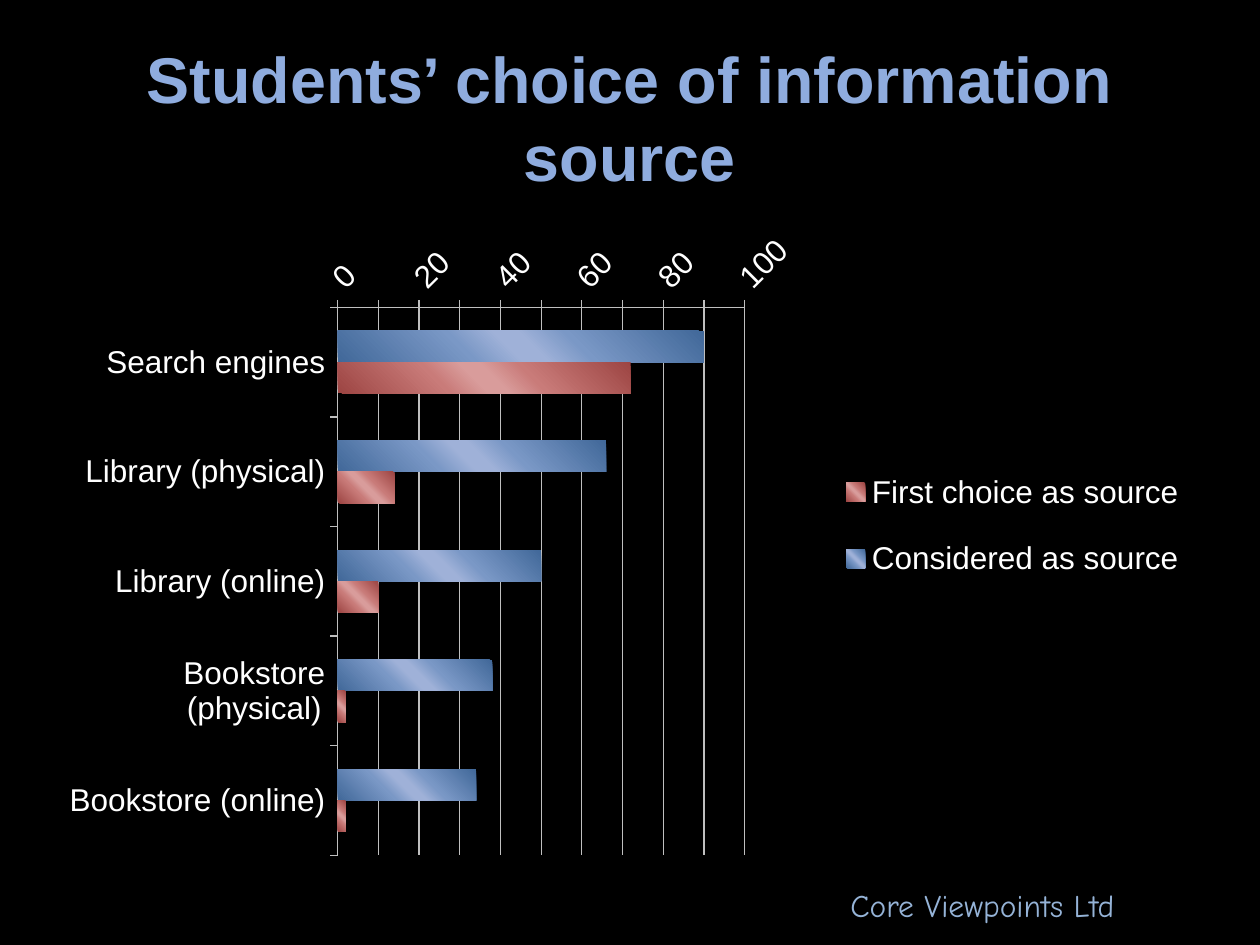
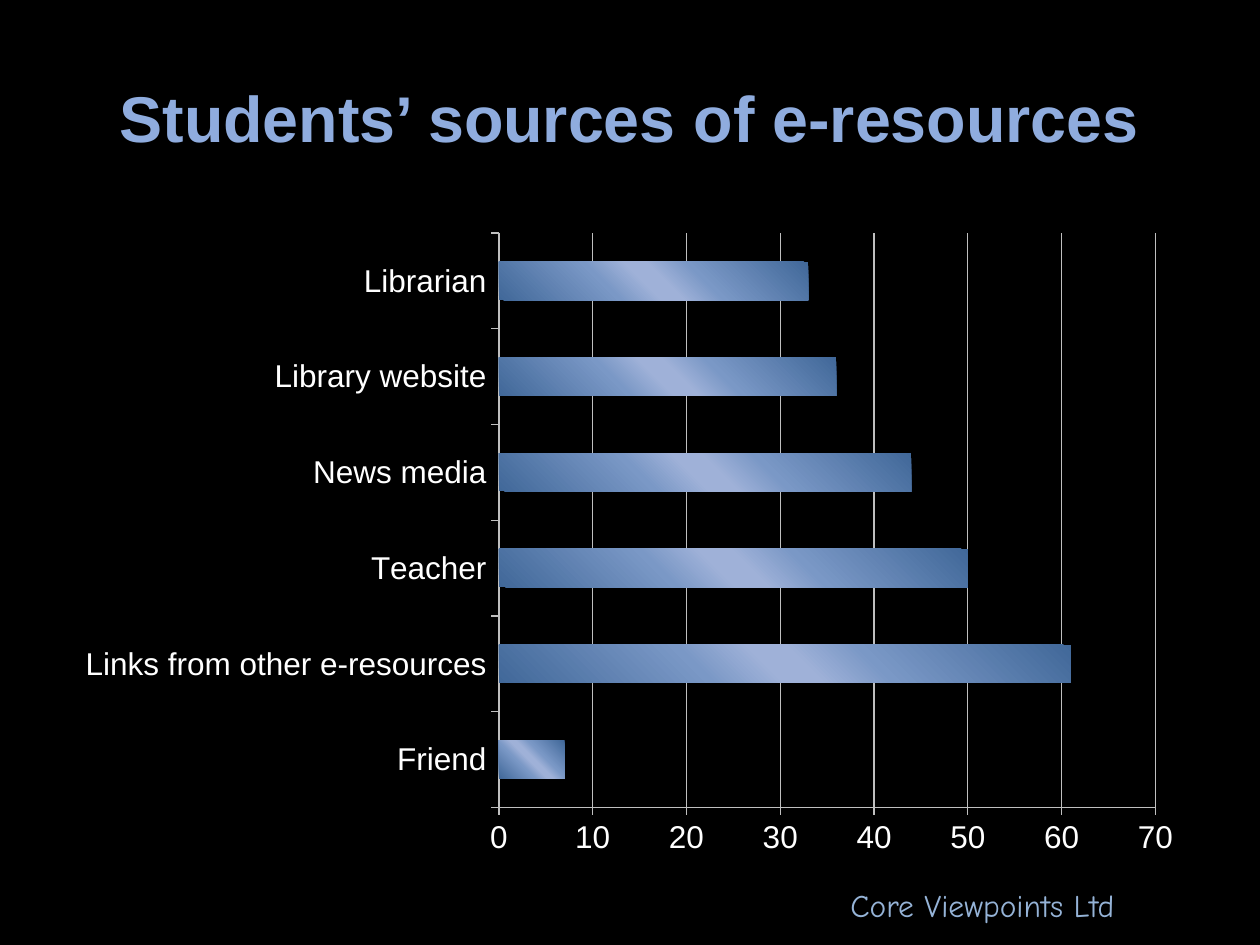
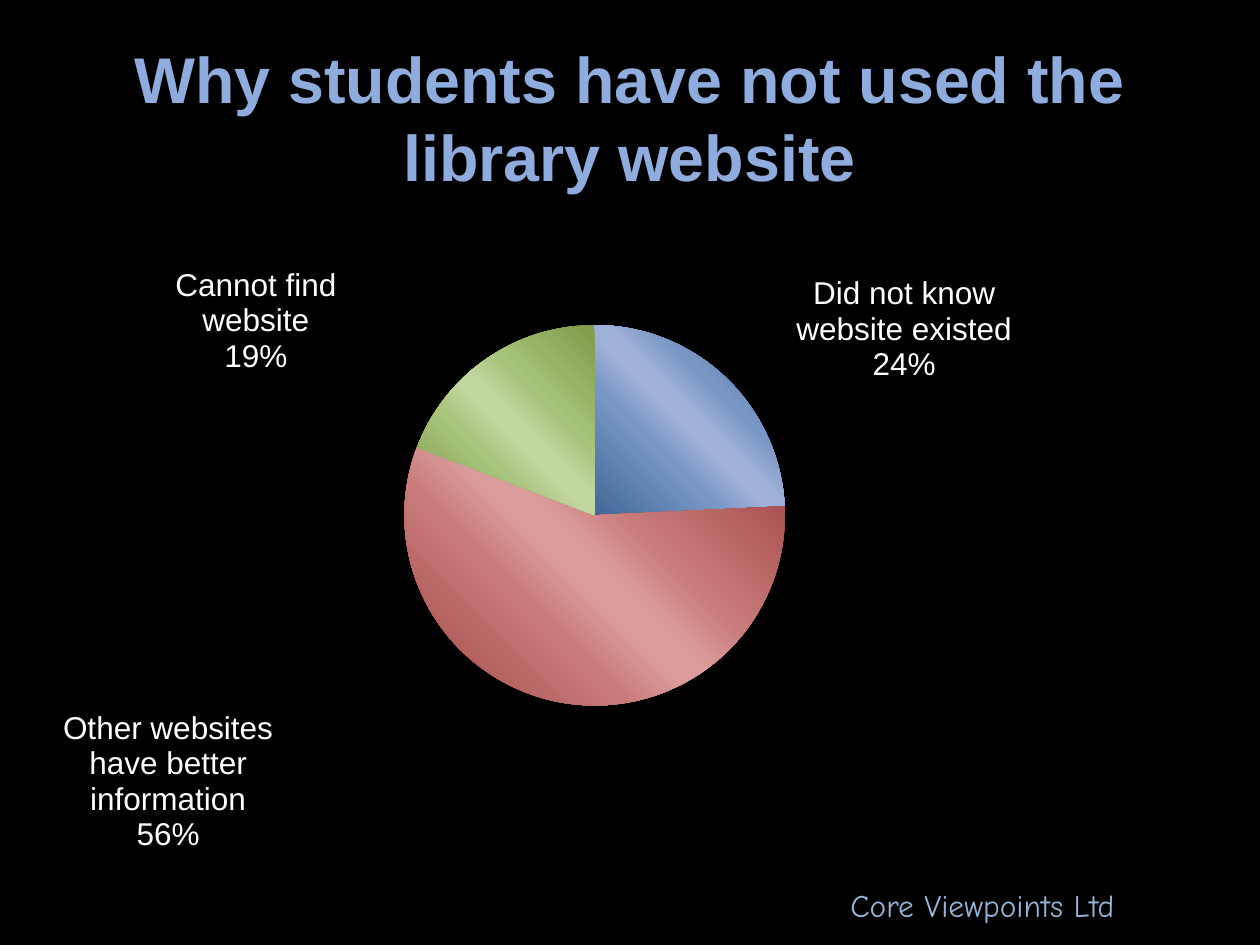
import pptx
import pptx.chart.data
import pptx.dml.color
import pptx.enum.chart
import pptx.enum.text
import pptx.oxml
import pptx.oxml.ns
import pptx.util

qn = pptx.oxml.ns.qn
color = pptx.dml.color.RGBColor.from_string
Inches = pptx.util.Inches
Pt = pptx.util.Pt
ChartType = pptx.enum.chart.XL_CHART_TYPE

BACKGROUND = "000000"
TITLE = "8FACDE"
FOOTER = "95B3D7"
TEXT = "FFFFFF"
GRID = "BFBFBF"
BLUE = ("416899", "7A98C6", "9FB1D8")
RED = ("9D4543", "C97B79", "D99C9B")
GREEN = ("7F9A4A", "A9C47C", "C2D6A0")
CHART_WIDTH = 9
CHART_HEIGHT = 5.15

title_format = {"name": "Arial", "size": Pt(36.9), "bold": True}
footer_format = {"name": "Comic Neue", "size": Pt(18)}
chart_format = {"name": "Arial", "size": Pt(18)}
title_frame_format = {
    "word_wrap": True,
    "auto_size": pptx.enum.text.MSO_AUTO_SIZE.NONE,
    "vertical_anchor": pptx.enum.text.MSO_ANCHOR.MIDDLE,
}
label_format = {
    "show_value": True,
    "show_category_name": True,
    "show_percentage": False,
    "number_format": '0"%"',
    "number_format_is_linked": False,
    "position": pptx.enum.chart.XL_LABEL_POSITION.OUTSIDE_END,
}

pages = [
    {
        "title": "Students’ choice of information source",
        "type": ChartType.BAR_CLUSTERED,
        "categories": ["Search engines", "Library (physical)", "Library (online)",
                       "Bookstore (physical)", "Bookstore (online)"],
        "series": {"Considered as source": (90, 66, 50, 38, 34),
                   "First choice as source": (72, 14, 10, 2, 2)},
        "plot": {"x": 2.18, "y": 0.69, "w": 3.23, "h": 4.35},
        "maximum": 100,
        "reverse": True,
        "legend": {"x": 6.16, "y": 1.77, "w": 2.75, "h": 1.3},
    },
    {
        "title": "Students’ sources of e-resources",
        "type": ChartType.BAR_CLUSTERED,
        "categories": ["Friend", "Links from other e-resources", "Teacher",
                       "News media", "Library website", "Librarian"],
        "series": {"Series 1": (7, 61, 50, 44, 36, 33)},
        "plot": {"x": 3.46, "y": 0.1, "w": 5.21, "h": 4.56},
        "maximum": 70,
        "reverse": False,
        "legend": None,
    },
    {
        "title": "Why students have not used the library website",
        "type": ChartType.PIE,
        "categories": ["Did not know website existed",
                       "Other websites have better information",
                       "Cannot find website"],
        "series": {"Series 1": (24, 56, 19)},
        "plot": {"x": 2.71, "y": 0.83, "w": 3.02, "h": 3.02},
        "label_offsets": [(0.52, 0.08), (-2.98, 0), (-1.16, 0.17)],
        "legend": None,
    },
]


def place(parent, index, mode, lengths):
    for old_layout in parent.findall(qn("c:layout")):
        parent.remove(old_layout)
    layout = pptx.oxml.parse_xml(
        f"<c:layout {pptx.oxml.ns.nsdecls('c')}><c:manualLayout/></c:layout>")
    settings = {"layoutTarget": "inner"} if parent.tag == qn("c:plotArea") else {}
    settings.update({"xMode": mode, "yMode": mode})
    for name, length in lengths.items():
        settings[name] = length / (CHART_WIDTH if name in "xw" else CHART_HEIGHT)
    for name, value in settings.items():
        layout[0].append(pptx.oxml.parse_xml(
            f'<c:{name} {pptx.oxml.ns.nsdecls("c")} val="{value}"/>'))
    parent.insert(index, layout)


def shade(fill, element, shades):
    dark, middle, light = shades
    fill.gradient()
    fill.gradient_angle = 45
    stops = next(element.iter(qn("a:gsLst")))
    for stop in list(stops):
        stops.remove(stop)
    for position, value in zip((0, 35, 47, 53, 65, 100), (dark, middle, light, light, middle, dark)):
        stops.append(pptx.oxml.parse_xml(
            f'<a:gs {pptx.oxml.ns.nsdecls("a")} pos="{position * 1000}">'
            f'<a:srgbClr val="{value}"/></a:gs>'))


presentation = pptx.Presentation()
presentation.slide_width = Inches(10)
presentation.slide_height = Inches(7.5)
master_fill = presentation.slide_master.background.fill
master_fill.solid()
master_fill.fore_color.rgb = color(BACKGROUND)

for page in pages:
    slide = presentation.slides.add_slide(presentation.slide_layouts[5])

    title = slide.shapes.title
    title.left, title.top, title.width, title.height = map(Inches, (0.5, 0.3, 9, 1.25))
    for name, value in title_frame_format.items():
        setattr(title.text_frame, name, value)

    footer = slide.shapes.add_textbox(Inches(6.65), Inches(6.98), Inches(2.99), Inches(0.4))
    footer.text_frame.word_wrap = True

    for shape, text, font_format, text_color in (
        (title, page["title"], title_format, TITLE),
        (footer, "Core Viewpoints Ltd", footer_format, FOOTER),
    ):
        run = shape.text_frame.paragraphs[0].add_run()
        run.text = text
        run.font.color.rgb = color(text_color)
        for name, value in font_format.items():
            setattr(run.font, name, value)
    title.text_frame.paragraphs[0].alignment = pptx.enum.text.PP_ALIGN.CENTER

    chart_data = pptx.chart.data.CategoryChartData()
    chart_data.categories = page["categories"]
    for name, values in page["series"].items():
        chart_data.add_series(name, values)
    chart = slide.shapes.add_chart(
        page["type"], Inches(0.5), Inches(1.75),
        Inches(CHART_WIDTH), Inches(CHART_HEIGHT), chart_data).chart
    chart.has_title = False
    chart.has_legend = page["legend"] is not None
    chart.font.color.rgb = color(TEXT)
    for name, value in chart_format.items():
        setattr(chart.font, name, value)
    plot = chart.plots[0]
    place(next(chart.element.iter(qn("c:plotArea"))), 0, "edge", page["plot"])

    if chart.has_legend:
        chart.legend.position = pptx.enum.chart.XL_LEGEND_POSITION.RIGHT
        chart.legend.include_in_layout = False
        place(next(chart.element.iter(qn("c:legend"))), 1, "edge", page["legend"])

    if page["type"] == ChartType.BAR_CLUSTERED:
        plot.vary_by_categories = False
        plot.gap_width = 150
        plot.overlap = 0
        for series, shades in zip(plot.series, (BLUE, RED)):
            shade(series.format.fill, series._element, shades)

        value_axis = chart.value_axis
        value_axis.minimum_scale = 0
        value_axis.maximum_scale = page["maximum"]
        value_axis.major_unit = 10
        value_axis.has_major_gridlines = True
        chart.category_axis.reverse_order = page["reverse"]
        for axis in (chart.category_axis, value_axis):
            axis.major_tick_mark = pptx.enum.chart.XL_TICK_MARK.OUTSIDE
            for name, value in chart_format.items():
                setattr(axis.tick_labels.font, name, value)
            axis.tick_labels.font.color.rgb = color(TEXT)
        for line in (chart.category_axis.format.line, value_axis.format.line,
                     value_axis.major_gridlines.format.line):
            line.color.rgb = color(GRID)
            line.width = Pt(0.75)
        if page["reverse"]:
            next(value_axis._element.iter(qn("a:bodyPr"))).set("rot", str(-45 * 60000))
    else:
        plot.vary_by_categories = True
        series = plot.series[0]
        labels = series.data_labels
        for name, value in label_format.items():
            setattr(labels, name, value)
        for index, (shades, offset) in enumerate(zip((BLUE, RED, GREEN), page["label_offsets"])):
            point = series.points[index]
            fill = point.format.fill
            shade(fill, series._element.findall(qn("c:dPt"))[index], shades)
            point.data_label.position = label_format["position"]
            label = list(series._element.iter(qn("c:dLbl")))[index]
            label.find(qn("c:showCatName")).set("val", "1")
            place(label, 1, "factor", dict(zip("xy", offset)))
            label.insert(2, pptx.oxml.parse_xml(
                f"<c:numFmt {pptx.oxml.ns.nsdecls('c')} formatCode='0\"%\"' sourceLinked='0'/>"))
        for leader_lines in series._element.iter(qn("c:showLeaderLines")):
            leader_lines.set("val", "0")
        for bubble_size in list(series._element.iter(qn("c:showBubbleSize"))):
            bubble_size.addnext(pptx.oxml.parse_xml(
                f"<c:separator {pptx.oxml.ns.nsdecls('c')}>\n</c:separator>"))

presentation.save("out.pptx")
